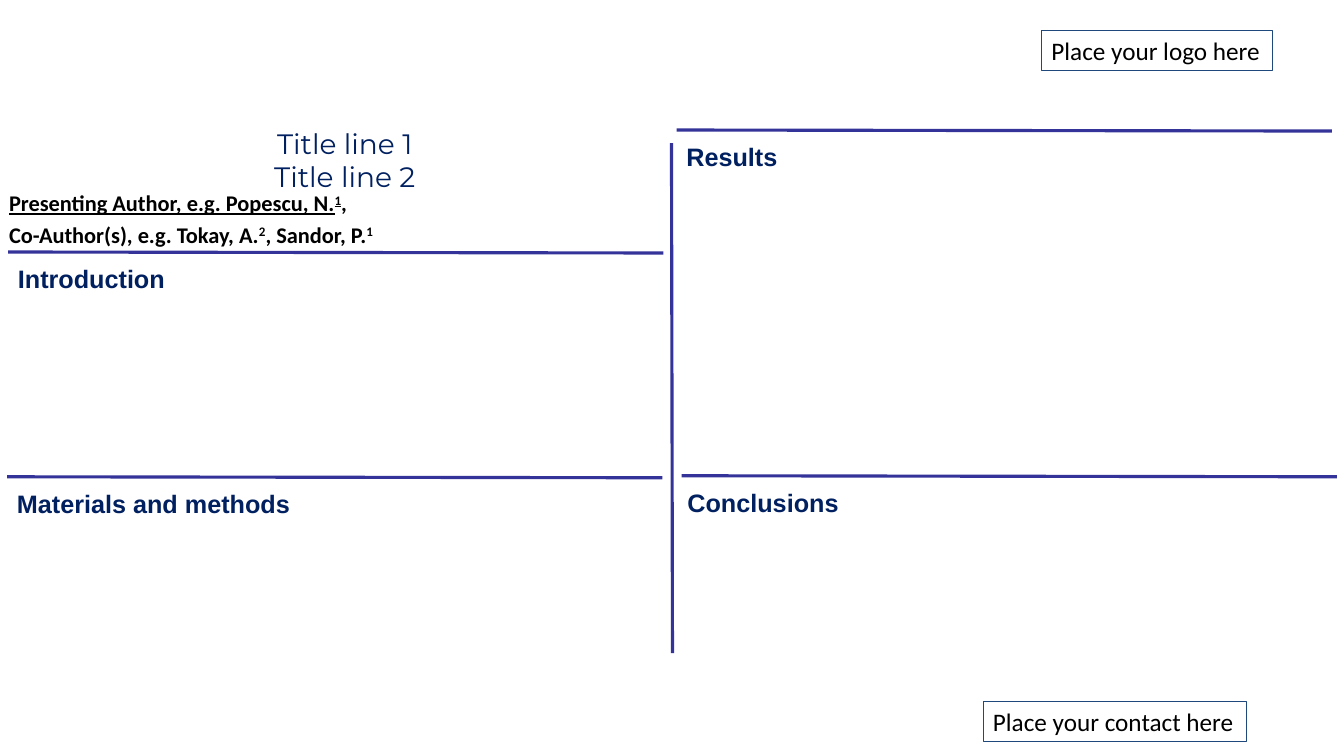
from lxml.etree import SubElement
from pptx import Presentation
from pptx.dml.color import RGBColor
from pptx.enum.shapes import MSO_CONNECTOR, MSO_SHAPE
from pptx.enum.text import MSO_ANCHOR, PP_ALIGN
from pptx.oxml.ns import qn
from pptx.util import Inches, Pt


def color(value):
    return RGBColor.from_string(value)


def style(p, name, size, value, bold=False):
    p.font.name = name
    p.font.size = Pt(size)
    p.font.bold = bold
    p.font.color.rgb = color(value)


prs = Presentation()
prs.slide_width = Inches(13.33)
prs.slide_height = Inches(7.5)
s = prs.slides.add_slide(prs.slide_layouts[6])

sp = s.shapes.add_textbox(Inches(0.17), Inches(1.25), Inches(6.5), Inches(0.67))
tf = sp.text_frame
tf.word_wrap = True
tf.vertical_anchor = MSO_ANCHOR.MIDDLE
p = tf.paragraphs[0]
p.text = "Title line 1\vTitle line 2"
p.alignment = PP_ALIGN.CENTER
style(p, "Montserrat", 20, "002060")

author_lines = [
    [("Presenting Author, e.g. Popescu, N.", True, False), ("1", True, True),
     (",", False, False)],
    [("Co-Author(s), e.g. Tokay, A.", False, False), ("2", False, True),
     (", Sandor, P.", False, False), ("1", False, True)],
]
sp = s.shapes.add_textbox(Inches(0), Inches(1.84), Inches(6.5), Inches(0.68))
tf = sp.text_frame
tf.word_wrap = True
tf.margin_left = tf.margin_right = Inches(0.09)
tf.margin_top = tf.margin_bottom = Inches(0.04)
for i, runs in enumerate(author_lines):
    p = tf.add_paragraph() if i else tf.paragraphs[0]
    if i:
        p.space_before = Pt(3.2)
    style(p, "Calibri", 16, "000000", True)
    for text, underline, superscript in runs:
        r = p.add_run()
        r.text = text
        if underline:
            r.font.underline = True
        if superscript:
            r.font._element.set("baseline", "30000")

for text, left, top, width in [
    ("Place your logo here", 10.33, 0.3, 2.29),
    ("Place your contact here", 9.75, 6.96, 2.61),
]:
    sp = s.shapes.add_shape(MSO_SHAPE.RECTANGLE, Inches(left), Inches(top),
                            Inches(width), Inches(0.4))
    sp.shadow.inherit = False
    sp.fill.background()
    sp.line.color.rgb = color("1F497D")
    sp.line.width = Pt(0.75)
    tf = sp.text_frame
    tf.word_wrap = False
    tf.vertical_anchor = MSO_ANCHOR.TOP
    p = tf.paragraphs[0]
    p.text = text
    p.alignment = PP_ALIGN.LEFT
    style(p, "Calibri", 18, "000000")

rules = [(6.67, 6.48, 6.66, 1.42)]
for heading, left, top, text_left in [
    ("Introduction", 0.08, 2.5, 0.08),
    ("Materials and methods", 0.07, 4.73, 0.07),
    ("Results", 6.71, 1.29, 6.71),
    ("Conclusions", 6.76, 4.72, 6.72),
]:
    rules.append((left, top, left + 6.5, top + 0.01))
    sp = s.shapes.add_textbox(Inches(text_left), Inches(top + 0.05),
                              Inches(6.5), Inches(0.43))
    tf = sp.text_frame
    tf.word_wrap = True
    tf.vertical_anchor = MSO_ANCHOR.MIDDLE
    p = tf.paragraphs[0]
    p.text = heading
    style(p, "Arial", 18, "002060", True)

for x1, y1, x2, y2 in rules:
    rule = s.shapes.add_connector(MSO_CONNECTOR.STRAIGHT, Inches(x1), Inches(y1),
                                  Inches(x2), Inches(y2))
    rule.line.color.rgb = color("333399")
    rule.line.width = Pt(2.25)
    SubElement(rule._element.spPr, qn("a:effectLst"))

prs.save("out.pptx")
